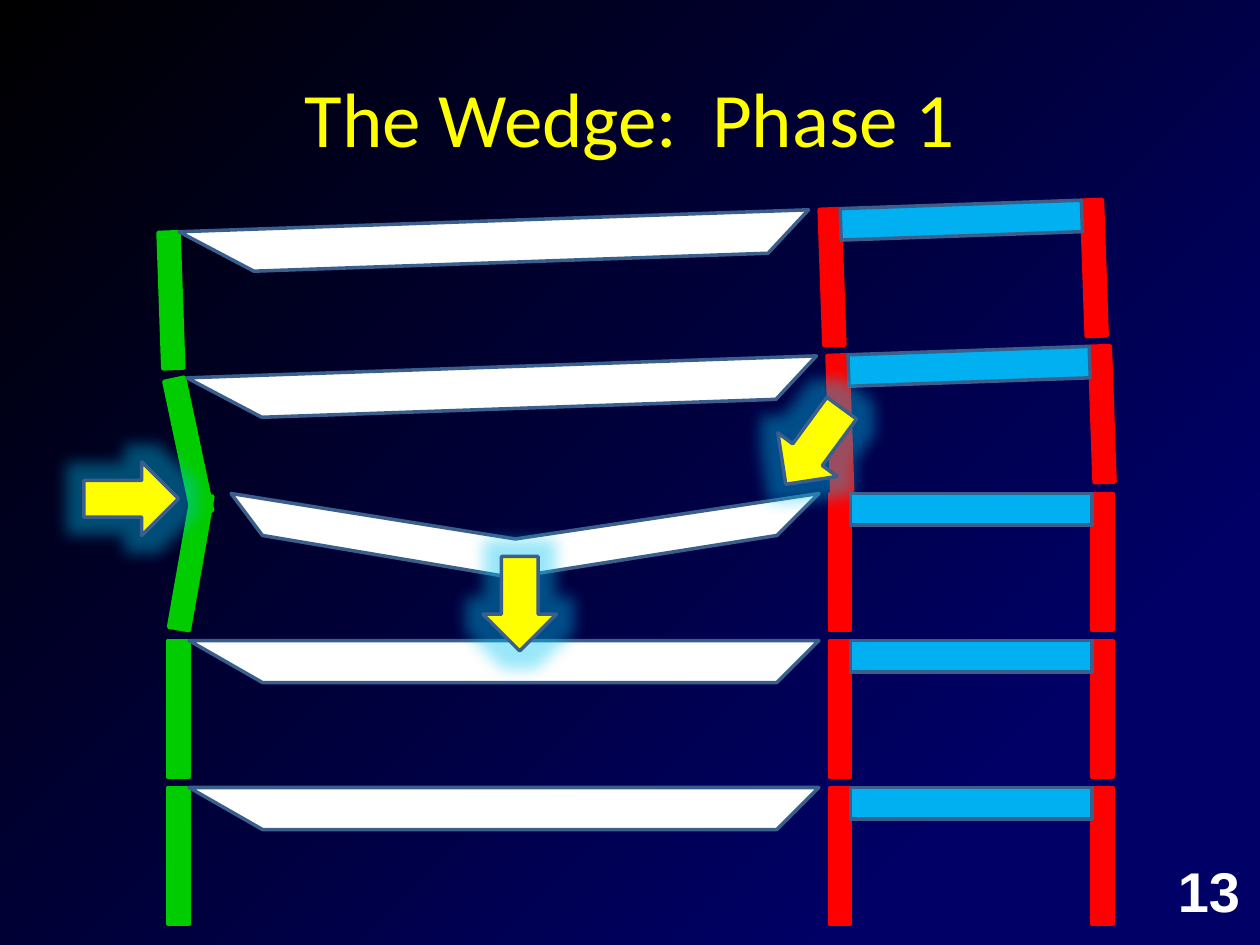
from dataclasses import dataclass
from math import cos, radians, sin

from lxml import etree
from pptx import Presentation
from pptx.dml.color import RGBColor
from pptx.enum.shapes import MSO_SHAPE
from pptx.enum.text import MSO_ANCHOR, PP_ALIGN
from pptx.oxml.ns import qn
from pptx.util import Pt

RECTANGLE = MSO_SHAPE.RECTANGLE
RIGHT_ARROW = MSO_SHAPE.RIGHT_ARROW
MIDDLE = MSO_ANCHOR.MIDDLE
CENTER = PP_ALIGN.CENTER
LEFT = PP_ALIGN.LEFT

BLACK = RGBColor(0x00, 0x00, 0x00)
NAVY = RGBColor(0x00, 0x00, 0x66)
WHITE = RGBColor(0xFF, 0xFF, 0xFF)
YELLOW = RGBColor(0xFF, 0xFF, 0x00)
GREEN = RGBColor(0x00, 0xCC, 0x00)
RED = RGBColor(0xFF, 0x00, 0x00)
BLUE = RGBColor(0x00, 0xB0, 0xF0)
OUTLINE = RGBColor(0x3A, 0x5F, 0x8C)
GLOW = RGBColor(0x00, 0xC5, 0xF2)

POST_WIDTH, POST_HEIGHT = 12, 78
STRIP_WIDTH, STRIP_HEIGHT = 138, 18
ARROW_WIDTH, ARROW_HEIGHT = 54, 42
GREEN_X, RED_XS, STRIP_X = 102, (480, 630), 555
PLANK_X, PLANK_HEIGHT = 288, 24
PLANK = ((108, 0), (150, 24), (444, 24), (468, 0))
BENT_PLANK = ((132, 0), (150, 24), (292.5, 48), (444, 24), (468, 0), (294.5, 26))


@dataclass(frozen=True)
class Post:
    x: float
    y: float
    angle: float


@dataclass(frozen=True)
class Level:
    center_y: float
    center_x: float = 366
    angle: float = 0
    bent: bool = False
    pushed_post: Post | None = None

    def place(self, x: float, drop: float) -> tuple[float, float]:
        turn = radians(self.angle)
        across, down = x - 366, drop - POST_HEIGHT / 2
        return (
            self.center_x + across * cos(turn) - down * sin(turn),
            self.center_y + across * sin(turn) + down * cos(turn),
        )


@dataclass(frozen=True)
class Arrow:
    x: float
    y: float
    angle: float


LEVELS = (
    Level(162.4, 361.5, -2),
    Level(245.9, angle=-2, pushed_post=Post(107.6, 254.9, -12)),
    Level(321, bent=True, pushed_post=Post(109, 321, 10)),
    Level(405),
    Level(489),
)
ARROWS = (Arrow(75, 285, 0), Arrow(297, 345, 90), Arrow(465, 255, 126.3))


def paint(shape, fill: RGBColor, line: RGBColor, angle: float) -> None:
    shape.shadow.inherit = False
    shape.fill.solid()
    shape.fill.fore_color.rgb = fill
    shape.line.color.rgb = line
    shape.line.width = Pt(2)
    shape.rotation = angle


def add_centered(shapes, kind, center: tuple[float, float], size: tuple[float, float],
                 fill: RGBColor, line: RGBColor, angle: float):
    (x, y), (width, height) = center, size
    shape = shapes.add_shape(kind, Pt(x - width / 2), Pt(y - height / 2), Pt(width), Pt(height))
    paint(shape, fill, line, angle)
    return shape


def add_plank(shapes, level: Level) -> None:
    x, y = level.place(PLANK_X, PLANK_HEIGHT / 2)
    outline = BENT_PLANK if level.bent else PLANK
    points = [
        (Pt(x + across - PLANK_X), Pt(y + drop - PLANK_HEIGHT / 2))
        for across, drop in outline
    ]
    builder = shapes.build_freeform(*points[0], scale=1.0)
    builder.add_line_segments(points[1:], close=True)
    paint(builder.convert_to_shape(), WHITE, OUTLINE, level.angle)


def add_level(shapes, level: Level) -> None:
    middle = POST_HEIGHT / 2
    post_size = (POST_WIDTH, POST_HEIGHT)
    post = level.pushed_post or Post(*level.place(GREEN_X, middle), level.angle)
    add_centered(shapes, RECTANGLE, (post.x, post.y), post_size, GREEN, GREEN, post.angle)
    for x in RED_XS:
        add_centered(shapes, RECTANGLE, level.place(x, middle), post_size, RED, RED, level.angle)
    add_centered(shapes, RECTANGLE, level.place(STRIP_X, STRIP_HEIGHT / 2),
                 (STRIP_WIDTH, STRIP_HEIGHT), BLUE, OUTLINE, level.angle)
    add_plank(shapes, level)


def add_arrow(shapes, arrow: Arrow) -> None:
    shape = add_centered(shapes, RIGHT_ARROW, (arrow.x, arrow.y), (ARROW_WIDTH, ARROW_HEIGHT),
                         YELLOW, OUTLINE, arrow.angle)
    effects = shape.element.spPr.find(qn("a:effectLst"))
    glow = etree.SubElement(effects, qn("a:glow"), rad=str(Pt(18)))
    color = etree.SubElement(glow, qn("a:srgbClr"), val=str(GLOW))
    etree.SubElement(color, qn("a:alpha"), val="40000")


def write(shape, text: str, alignment, color: RGBColor, font_format: dict) -> None:
    paragraph = shape.text_frame.paragraphs[0]
    paragraph.alignment = alignment
    run = paragraph.add_run()
    run.text = text
    run.font.color.rgb = color
    for name, value in font_format.items():
        setattr(run.font, name, value)


def paint_background(slide) -> None:
    fill = slide.background.fill
    fill.gradient()
    fill.gradient_angle = 315
    for stop, position, color in zip(fill.gradient_stops, (0, 0.81), (BLACK, NAVY)):
        stop.position = position
        stop.color.rgb = color


def main() -> None:
    presentation = Presentation()
    presentation.slide_width, presentation.slide_height = Pt(720), Pt(540)
    slide = presentation.slides.add_slide(presentation.slide_layouts[5])
    paint_background(slide)

    title = slide.shapes.title
    title.left, title.top, title.width, title.height = Pt(36), Pt(21.6), Pt(648), Pt(90)
    title.text_frame.vertical_anchor = MIDDLE
    write(title, "The Wedge:  Phase 1", CENTER, YELLOW, {"name": "Calibri", "size": Pt(44)})

    for level in LEVELS:
        add_level(slide.shapes, level)
    for arrow in ARROWS:
        add_arrow(slide.shapes, arrow)

    number = slide.shapes.add_textbox(Pt(666), Pt(486), Pt(66), Pt(46))
    number.text_frame.word_wrap = True
    write(number, "13", LEFT, WHITE, {"name": "Arial", "size": Pt(32), "bold": True})

    presentation.save("out.pptx")


if __name__ == "__main__":
    main()
